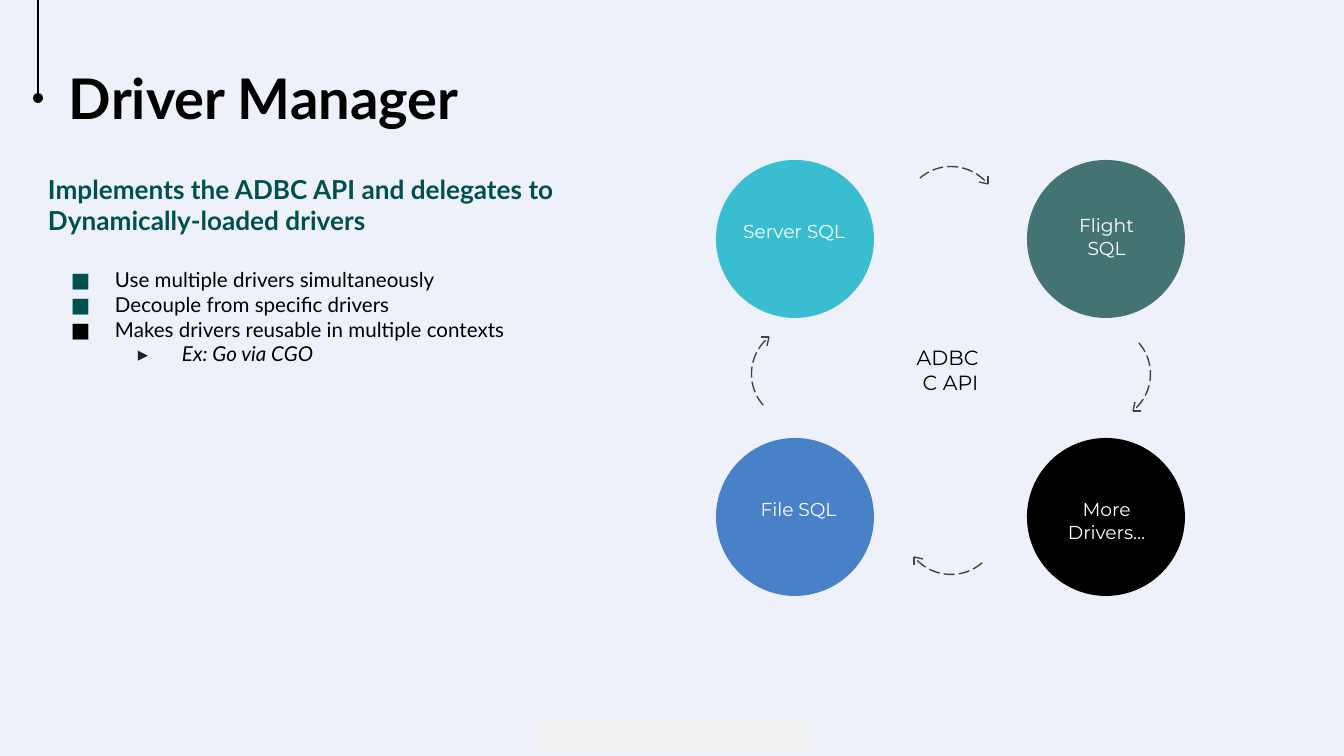
from lxml.etree import SubElement
from pptx import Presentation
from pptx.dml.color import RGBColor
from pptx.enum.dml import MSO_LINE
from pptx.enum.shapes import MSO_CONNECTOR, MSO_SHAPE
from pptx.enum.text import PP_ALIGN
from pptx.oxml.ns import qn
from pptx.util import Emu, Pt

TITLE = "Driver Manager"
HEADINGS = ["Implements the ADBC API and delegates to", "Dynamically-loaded drivers"]
BULLETS = [
    ("Use multiple drivers simultaneously", 0, "■", "005050"),
    ("Decouple from specific drivers", 0, "■", "005050"),
    ("Makes drivers reusable in multiple contexts", 0, "■", "000000"),
    ("Ex: Go via CGO", 1, "▸", "212121"),
]
DRIVERS = [
    ("Server SQL", 0, 0, "38BDD1", (724, 211, 140, 58)),
    ("Flight SQL", 1, 0, "447373", (1056, 205, 101, 58)),
    ("File SQL", 0, 1, "4981C8", (748, 489, 101, 58)),
    ("More Drivers…", 1, 1, "000000", (1056, 489, 101, 58)),
]
CENTER_LABEL = ["ADBC ", "C API"]

CIRCLE_LEFT, CIRCLE_TOP, CIRCLE_SIZE = 716, 160, 158
COLUMN_STEP, ROW_STEP = 311, 278
CYCLE_CENTER = (951, 374)
ARC_DISTANCES = [160, 152, 153, 152]
ARC_SIZE, ARC_START, ARC_END = 95, 229, 316.5
ARROW_TIP, ARROW_BARBS = (37, -30), [(28, -32), (37, -38)]


def px(length):
    """Turn pixels at 134.4 to the inch into EMU."""
    return Emu(round(length * 914400 / 134.4))


def color(value):
    """Turn a hex string into a colour."""
    return RGBColor.from_string(value)


def add_filled(slide, kind, box, fill):
    """Add a plain filled shape without outline or shadow."""
    shape = slide.shapes.add_shape(kind, *map(px, box))
    shape.shadow.inherit = False
    shape.fill.solid()
    shape.fill.fore_color.rgb = color(fill)
    shape.line.fill.background()


def add_line(slide, start, end, stroke):
    """Add a thin straight line."""
    line = slide.shapes.add_connector(MSO_CONNECTOR.STRAIGHT, *map(px, (*start, *end)))
    line.line.color.rgb = color(stroke)
    line.line.width = Pt(0.75)
    SubElement(line._element.spPr, qn("a:effectLst"))


def add_text_box(slide, box, inset):
    """Add a wrapping text box and return its text frame."""
    frame = slide.shapes.add_textbox(*map(px, box)).text_frame
    frame.word_wrap = True
    frame.margin_left = frame.margin_top = px(inset)
    frame.margin_right = frame.margin_bottom = px(inset)
    return frame


def add_paragraph(frame, text, font, size, fill, bold=False, italic=False):
    """Fill the first empty paragraph or append a new one."""
    paragraph = frame.paragraphs[0]
    if paragraph.runs:
        paragraph = frame.add_paragraph()
    run = paragraph.add_run()
    run.text = text
    run.font.name = font
    run.font.size = Pt(size)
    run.font.color.rgb = color(fill)
    run.font.bold = bold
    run.font.italic = italic
    return paragraph


def add_bullet(paragraph, level, mark, fill):
    """Give a paragraph a hanging coloured bullet."""
    paragraph.level = level
    properties = paragraph._p.get_or_add_pPr()
    properties.set("marL", str(px(67 * (level + 1))))
    properties.set("indent", str(px(-44)))
    bullet_color = SubElement(properties, qn("a:buClr"))
    SubElement(bullet_color, qn("a:srgbClr"), val=fill)
    SubElement(properties, qn("a:buFont"), typeface="Lato")
    SubElement(properties, qn("a:buChar"), char=mark)


def add_label(slide, box, lines, size, fill):
    """Add centred lines of diagram text."""
    frame = add_text_box(slide, box, 9)
    for text in lines:
        add_paragraph(frame, text, "Montserrat", size, fill).alignment = PP_ALIGN.CENTER


def turned(point, quarters):
    """Rotate a point clockwise by quarter turns."""
    x, y = point
    for _ in range(quarters):
        x, y = -y, x
    return x, y


def add_cycle_arrow(slide, quarters, distance):
    """Add a dashed arc with an open arrowhead on one side of the cycle."""
    def place(center, point):
        x, y = turned(point, quarters)
        return center[0] + x, center[1] + y

    center = place(CYCLE_CENTER, (0, -distance))
    corner = [value - ARC_SIZE / 2 for value in center]
    arc = slide.shapes.add_shape(MSO_SHAPE.ARC, *map(px, (*corner, ARC_SIZE, ARC_SIZE)))
    arc.shadow.inherit = False
    for index, angle in enumerate((ARC_START, ARC_END)):
        arc.adjustments[index] = (angle + 90 * quarters) % 360 * 0.6
    arc.fill.background()
    arc.line.color.rgb = color("434343")
    arc.line.width = Pt(0.75)
    arc.line.dash_style = MSO_LINE.LONG_DASH
    for barb in ARROW_BARBS:
        add_line(slide, place(center, ARROW_TIP), place(center, barb), "434343")


def main():
    """Build the slide and save it."""
    presentation = Presentation()
    presentation.slide_width, presentation.slide_height = px(1344), px(756)
    slide = presentation.slides.add_slide(presentation.slide_layouts[6])
    slide.background.fill.solid()
    slide.background.fill.fore_color.rgb = color("EEF1F9")

    title = add_text_box(slide, (69, 64, 1192, 67), 0)
    add_paragraph(title, TITLE, "Lato", 30, "000000", bold=True)
    add_line(slide, (38, 0), (38, 95), "000000")
    add_filled(slide, MSO_SHAPE.OVAL, (33, 93, 10, 10), "000000")

    body = add_text_box(slide, (35, 160, 1258, 554), 13)
    for text in HEADINGS:
        heading = add_paragraph(body, text, "Lato", 14, "005050", bold=True)
    heading.space_after = Pt(17)
    for text, level, mark, fill in BULLETS:
        paragraph = add_paragraph(body, text, "Lato", 11, "000000", italic=level > 0)
        add_bullet(paragraph, level, mark, fill)

    for name, column, row, fill, label_box in DRIVERS:
        left = CIRCLE_LEFT + column * COLUMN_STEP
        top = CIRCLE_TOP + row * ROW_STEP
        add_filled(slide, MSO_SHAPE.OVAL, (left, top, CIRCLE_SIZE, CIRCLE_SIZE), fill)
        add_label(slide, label_box, [name], 10, "FFFFFF")
    for quarters, distance in enumerate(ARC_DISTANCES):
        add_cycle_arrow(slide, quarters, distance)
    add_label(slide, (825, 336, 251, 86), CENTER_LABEL, 11, "000000")

    add_filled(slide, MSO_SHAPE.RECTANGLE, (532, 722, 276, 30), "F0F0F0")
    presentation.save("out.pptx")


if __name__ == "__main__":
    main()
